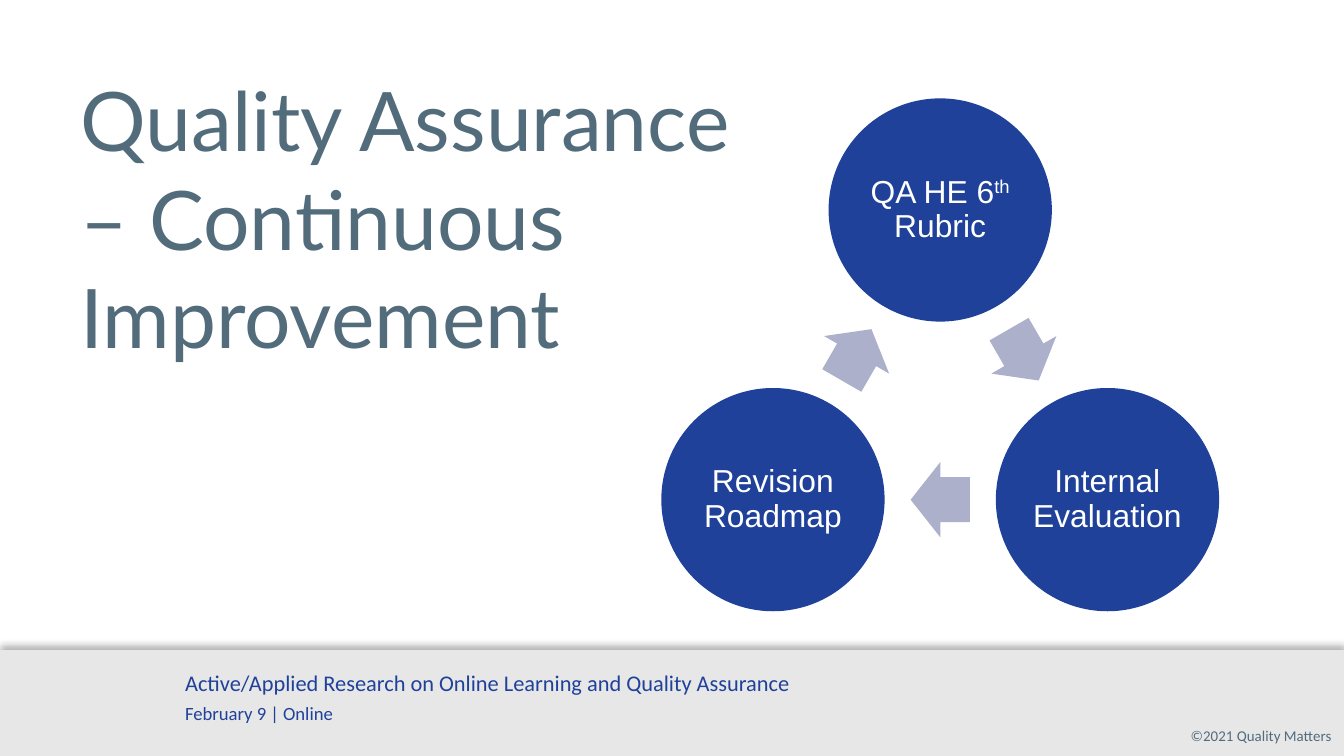
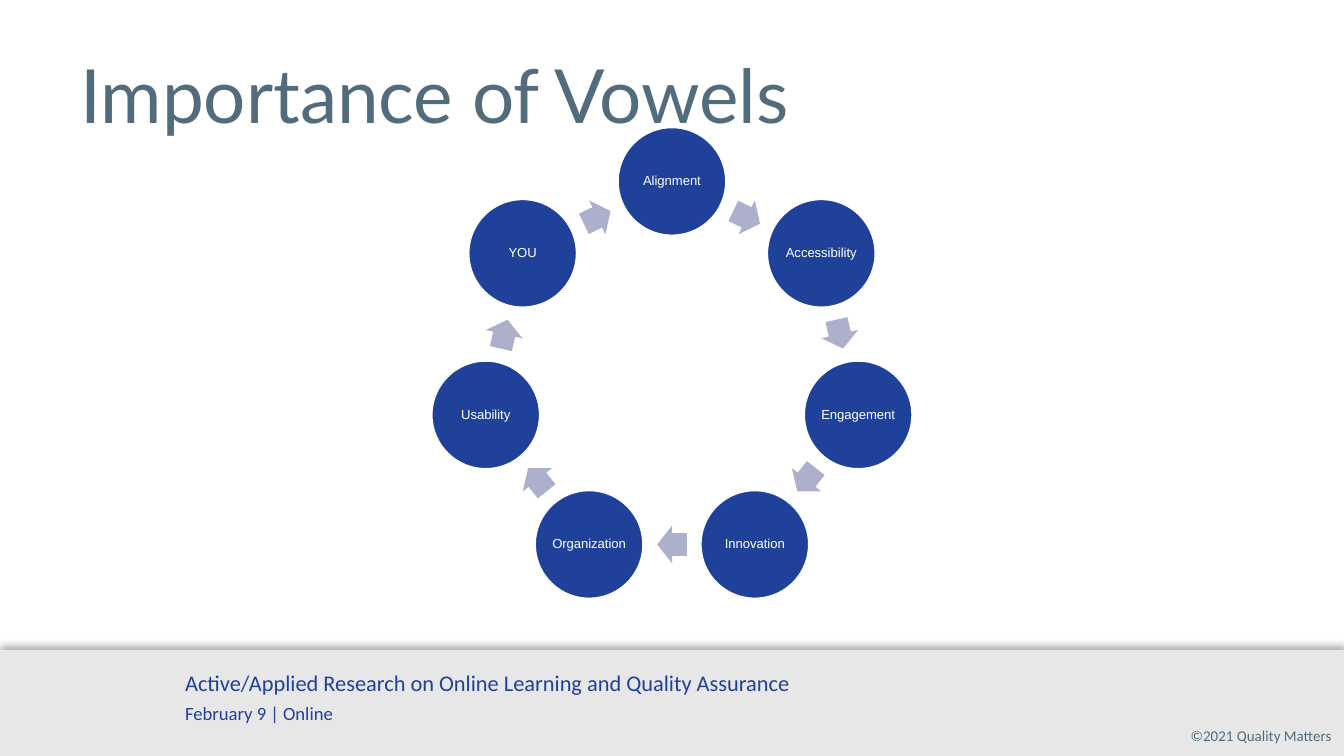
"""Build two slides that show continuous improvement cycles."""
from dataclasses import dataclass
from math import cos, pi, sin

from lxml.etree import SubElement
from pptx import Presentation
from pptx.dml.color import RGBColor
from pptx.enum.shapes import MSO_SHAPE
from pptx.enum.text import MSO_ANCHOR, MSO_AUTO_SIZE, PP_ALIGN
from pptx.oxml.ns import qn
from pptx.util import Cm, Pt


@dataclass(frozen=True)
class Theme:
    blue: str = "1F419A"
    slate: str = "526C7C"
    arrow: str = "ACB0CA"
    band: str = "E7E7E7"
    white: str = "FFFFFF"
    title_font: str = "Lato"
    footer_font: str = "Calibri"
    cycle_font: str = "Arial"
    event_size: int = 12
    date_size: int = 10
    copyright_size: int = 8


theme = Theme()


def add_span(para, text, *, size, font, color, align=PP_ALIGN.LEFT, raised=False):
    para.alignment = align
    span = para.add_run()
    span.text = text
    span.font.size = Pt(size)
    span.font.name = font
    span.font.color.rgb = RGBColor.from_string(color)
    if raised:
        span.font._element.set("baseline", "30000")


def set_frame(box, margins, anchor=MSO_ANCHOR.TOP):
    frame = box.text_frame
    frame.word_wrap = True
    frame.auto_size = MSO_AUTO_SIZE.NONE
    frame.vertical_anchor = anchor
    frame.margin_left, frame.margin_top, frame.margin_right, frame.margin_bottom = [
        Cm(margin) for margin in margins
    ]
    return frame


slides = [
    {
        "title": "Quality Assurance – Continuous Improvement",
        "title_size": 44,
        "title_box": (1.27, 0.58, 13.92, 7.06),
        "center": (17.77, 7.62),
        "radius": 3.65,
        "circle": 4.22,
        "arrow": (1.12, 1.42),
        "outline": 0,
        "label_size": 17,
        "margin": 0.05,
        "labels": [
            [("QA HE 6", False), ("th", True), (" Rubric", False)],
            [("Internal Evaluation", False)],
            [("Revision Roadmap", False)],
        ],
    },
    {
        "title": "Importance of Vowels",
        "title_size": 40,
        "title_box": (1.27, 0.58, 23.24, 2.39),
        "center": (12.7, 7.04),
        "radius": 3.61,
        "circle": 2.08,
        "arrow": (0.56, 0.71),
        "outline": 2,
        "label_size": 7,
        "margin": 0.03,
        "labels": [
            [(word, False)]
            for word in (
                "Alignment", "Accessibility", "Engagement", "Innovation",
                "Organization", "Usability", "YOU",
            )
        ],
    },
]

deck = Presentation()
deck.slide_width = Cm(25.4)
deck.slide_height = Cm(14.29)

for content in slides:
    page = deck.slides.add_slide(deck.slide_layouts[5])

    band = page.shapes.add_shape(MSO_SHAPE.RECTANGLE, 0, Cm(12.29), deck.slide_width, Cm(2))
    band.shadow.inherit = False
    band.fill.solid()
    band.fill.fore_color.rgb = RGBColor.from_string(theme.band)
    band.line.fill.background()
    effects = band._element.spPr.find(qn("a:effectLst"))
    shadow = SubElement(
        effects, qn("a:outerShdw"), blurRad=str(Pt(4)), dist=str(Pt(3)),
        dir="16200000", algn="b", rotWithShape="0",
    )
    shadow_color = SubElement(shadow, qn("a:srgbClr"), val="000000")
    SubElement(shadow_color, qn("a:alpha"), val="29000")

    copyright_box = page.shapes.add_textbox(Cm(21.13), Cm(13.61), Cm(4.04), Cm(0.61))
    frame = set_frame(copyright_box, (0.25, 0.13, 0, 0.13))
    add_span(frame.paragraphs[0], "©2021 Quality Matters", size=theme.copyright_size,
             font=theme.footer_font, color=theme.slate, align=PP_ALIGN.RIGHT)

    event_box = page.shapes.add_textbox(Cm(3.25), Cm(12.52), Cm(16.23), Cm(1.3))
    frame = set_frame(event_box, (0.25, 0.13, 0.25, 0.13))
    add_span(frame.paragraphs[0],
             "Active/Applied Research on Online Learning and Quality Assurance",
             size=theme.event_size, font=theme.footer_font, color=theme.blue)
    date_para = frame.add_paragraph()
    date_para.space_before = Pt(3)
    add_span(date_para, "February 9 | Online", size=theme.date_size,
             font=theme.footer_font, color=theme.blue)

    title = page.shapes.title
    title.left, title.top, title.width, title.height = [
        Cm(length) for length in content["title_box"]
    ]
    frame = set_frame(title, (0.25, 0.13, 0.25, 0.13), MSO_ANCHOR.MIDDLE)
    add_span(frame.paragraphs[0], content["title"], size=content["title_size"],
             font=theme.title_font, color=theme.slate)

    center_x, center_y = content["center"]
    radius = content["radius"]
    diameter = content["circle"]
    arrow_width, arrow_height = content["arrow"]
    count = len(content["labels"])
    step = 2 * pi / count
    arrow_radius = radius * cos(step / 2)

    for index, label in enumerate(content["labels"]):
        angle = index * step
        circle = page.shapes.add_shape(
            MSO_SHAPE.OVAL,
            Cm(center_x + radius * sin(angle) - diameter / 2),
            Cm(center_y - radius * cos(angle) - diameter / 2),
            Cm(diameter), Cm(diameter),
        )
        circle.shadow.inherit = False
        circle.fill.solid()
        circle.fill.fore_color.rgb = RGBColor.from_string(theme.blue)
        if content["outline"]:
            circle.line.color.rgb = RGBColor.from_string(theme.white)
            circle.line.width = Pt(content["outline"])
        else:
            circle.line.fill.background()
        frame = set_frame(circle, [content["margin"]] * 4, MSO_ANCHOR.MIDDLE)
        para = frame.paragraphs[0]
        para.line_spacing = 0.9
        for text, raised in label:
            add_span(para, text, size=content["label_size"], font=theme.cycle_font,
                     color=theme.white, align=PP_ALIGN.CENTER, raised=raised)

        middle = angle + step / 2
        arrow = page.shapes.add_shape(
            MSO_SHAPE.RIGHT_ARROW,
            Cm(center_x + arrow_radius * sin(middle) - arrow_width / 2),
            Cm(center_y - arrow_radius * cos(middle) - arrow_height / 2),
            Cm(arrow_width), Cm(arrow_height),
        )
        arrow.shadow.inherit = False
        arrow.adjustments[0] = 0.6
        arrow.adjustments[1] = 0.5
        arrow.rotation = 360 * (index + 0.5) / count
        arrow.fill.solid()
        arrow.fill.fore_color.rgb = RGBColor.from_string(theme.arrow)
        arrow.line.fill.background()

deck.save("out.pptx")
